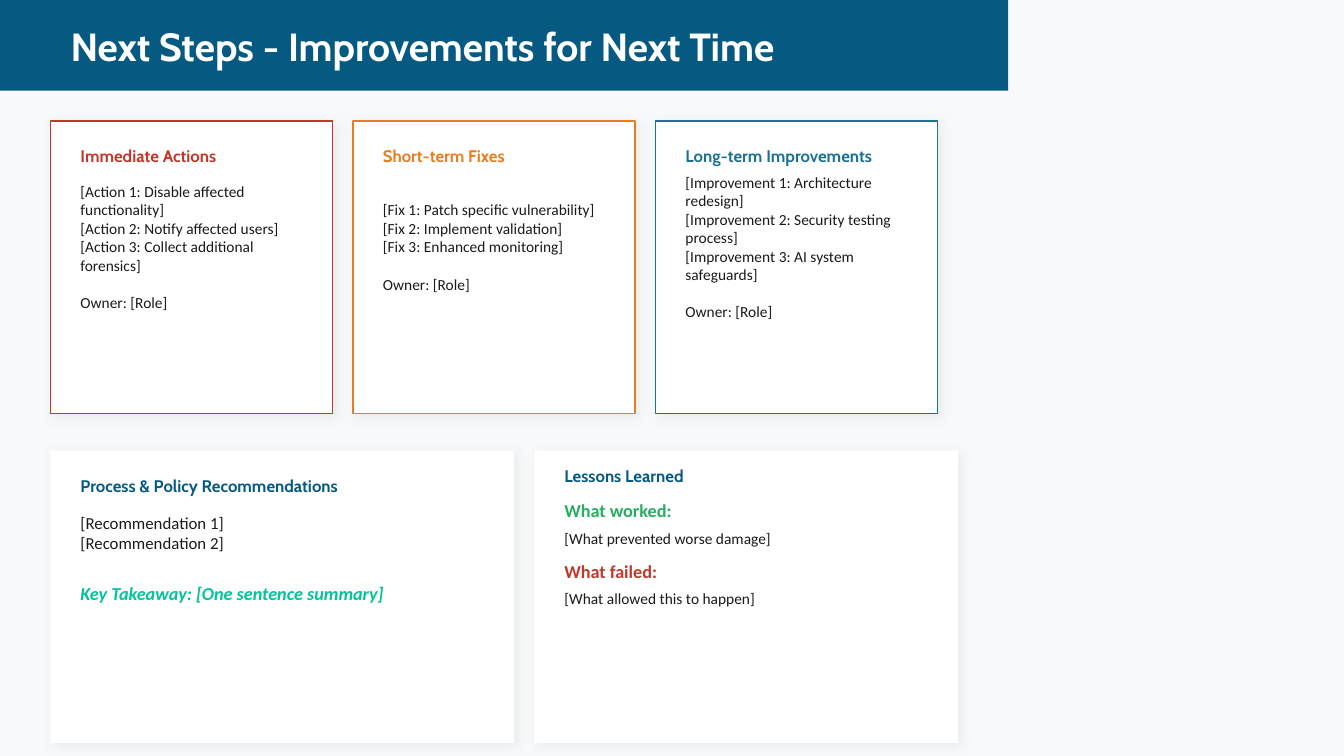
from lxml.etree import SubElement
from pptx import Presentation
from pptx.dml.color import RGBColor
from pptx.enum.shapes import MSO_SHAPE as SHAPE
from pptx.enum.text import MSO_ANCHOR as ANCHOR, MSO_AUTO_SIZE as AUTO, PP_ALIGN as ALIGN
from pptx.oxml.ns import qn
from pptx.util import Pt

PX = 9144
COLORS = {
    "page": "F8F9FA", "white": "FFFFFF", "navy": "065A82", "ink": "1A1A1A",
    "red": "C0392B", "orange": "E67E22", "teal": "1C7293", "green": "27AE60",
    "mint": "02C39A", "shadow": "DDDDDD",
}
ACTION_CARDS = [
    ("Immediate Actions", "red",
     ["[Action 1: Disable affected functionality]", "[Action 2: Notify affected users]",
      "[Action 3: Collect additional forensics]"]),
    ("Short-term Fixes", "orange",
     ["[Fix 1: Patch specific vulnerability]", "[Fix 2: Implement validation]",
      "[Fix 3: Enhanced monitoring]"]),
    ("Long-term Improvements", "teal",
     ["[Improvement 1: Architecture redesign]", "[Improvement 2: Security testing process]",
      "[Improvement 3: AI system safeguards]"]),
]
LESSONS = [
    ("What worked:", "green", "[What prevented worse damage]"),
    ("What failed:", "red", "[What allowed this to happen]"),
]


def rgb(name):
    """Return the named colour."""
    return RGBColor.from_string(COLORS[name])


def px(*lengths):
    """Turn px lengths into EMU."""
    return [n * PX for n in lengths]


def add_rect(s, x, y, w, h, fill, line=None):
    """Draw a flat rectangle with an optional outline."""
    sp = s.shapes.add_shape(SHAPE.RECTANGLE, *px(x, y, w, h))
    sp.shadow.inherit = False
    sp.fill.solid()
    sp.fill.fore_color.rgb = rgb(fill)
    if line:
        sp.line.color.rgb = rgb(line)
        sp.line.width = Pt(1)
    else:
        sp.line.fill.background()
    return sp


def add_card(s, x, y, w, h, line=None):
    """Draw a white panel with a soft shadow to the lower right."""
    sp = add_rect(s, x, y, w, h, "white", line)
    effects = sp._element.spPr.find(qn("a:effectLst"))
    shadow = SubElement(effects, qn("a:outerShdw"), blurRad=str(Pt(8)), dist=str(Pt(3)),
                        dir=str(45 * 60000), algn="bl", rotWithShape="0")
    color = SubElement(shadow, qn("a:srgbClr"), val=COLORS["shadow"])
    SubElement(color, qn("a:alpha"), val="50000")


def write(sp, lines, size, color, font="Calibri", bold=False, italic=False):
    """Fill a shape with left-aligned, vertically centred lines."""
    tf = sp.text_frame
    tf.word_wrap = True
    tf.auto_size = AUTO.NONE
    tf.vertical_anchor = ANCHOR.MIDDLE
    tf.text = "\n".join(lines)
    for p in tf.paragraphs:
        p.alignment = ALIGN.LEFT
        for r in p.runs:
            r.font.name, r.font.size = font, Pt(size)
            r.font.bold, r.font.italic = bold, italic
            r.font.color.rgb = rgb(color)
    return tf


def add_text(s, x, y, w, h, lines, size, color, **style):
    """Place a text box and write its lines."""
    return write(s.shapes.add_textbox(*px(x, y, w, h)), lines, size, color, **style)


def add_heading(s, x, y, w, h, text, color):
    """Place a card heading."""
    add_text(s, x, y, w, h, [text], 12, color, font="Cabin", bold=True)


def header(s, x, y, w, h):
    """Draw the title band and set the title on it."""
    band = add_rect(s, x, y, w, h, "navy")
    title = s.shapes.title
    band._element.addnext(title._element)
    title.left, title.top, title.width, title.height = px(x + 60, y + 20, w - 120, h - 40)
    write(title, ["Next Steps - Improvements for Next Time"], 28, "white", font="Cabin", bold=True)


def action_card(s, x, y, w, h, heading, color, actions):
    """Draw an outlined card of actions with their owner."""
    add_card(s, x, y, w, h, color)
    add_heading(s, x + 20, y + 15, w - 40, 40, heading, color)
    tf = add_text(s, x + 20, y + 65, w - 40, 120, actions + ["Owner: [Role]"], 11, "ink")
    tf.paragraphs[-1].space_before = Pt(13.4)


def recommendations(s, x, y, w, h):
    """Draw the recommendations card with its takeaway."""
    add_card(s, x, y, w, h)
    x, w = x + 20, w - 40
    add_heading(s, x, y + 17, w, 35, "Process & Policy Recommendations", "navy")
    add_text(s, x, y + 57, w, 50, ["[Recommendation 1]", "[Recommendation 2]"], 12, "ink")
    add_text(s, x, y + 122, w, 40, ["Key Takeaway: [One sentence summary]"], 13, "mint",
             bold=True, italic=True)


def lessons_learned(s, x, y, w, h):
    """Draw the lessons card with its question and answer pairs."""
    add_card(s, x, y, w, h)
    x, w = x + 20, w - 40
    add_heading(s, x, y + 7, w, 35, "Lessons Learned", "navy")
    for i, (label, color, answer) in enumerate(LESSONS):
        top = y + 47 + 60 * i
        add_text(s, x, top, w, 25, [label], 13, color, bold=True)
        add_text(s, x, top + 25, w, 30, [answer], 11, "ink")


def main():
    """Build the slide and save it."""
    prs = Presentation()
    prs.slide_width, prs.slide_height = px(1333, 750)
    s = prs.slides.add_slide(prs.slide_layouts[5])
    s.background.fill.solid()
    s.background.fill.fore_color.rgb = rgb("page")
    header(s, 0, 0, 1000, 90)
    for i, card in enumerate(ACTION_CARDS):
        action_card(s, 50 + 300 * i, 120, 280, 290, *card)
    recommendations(s, 50, 447, 460, 290)
    lessons_learned(s, 530, 447, 420, 290)
    prs.save("out.pptx")


if __name__ == "__main__":
    main()
